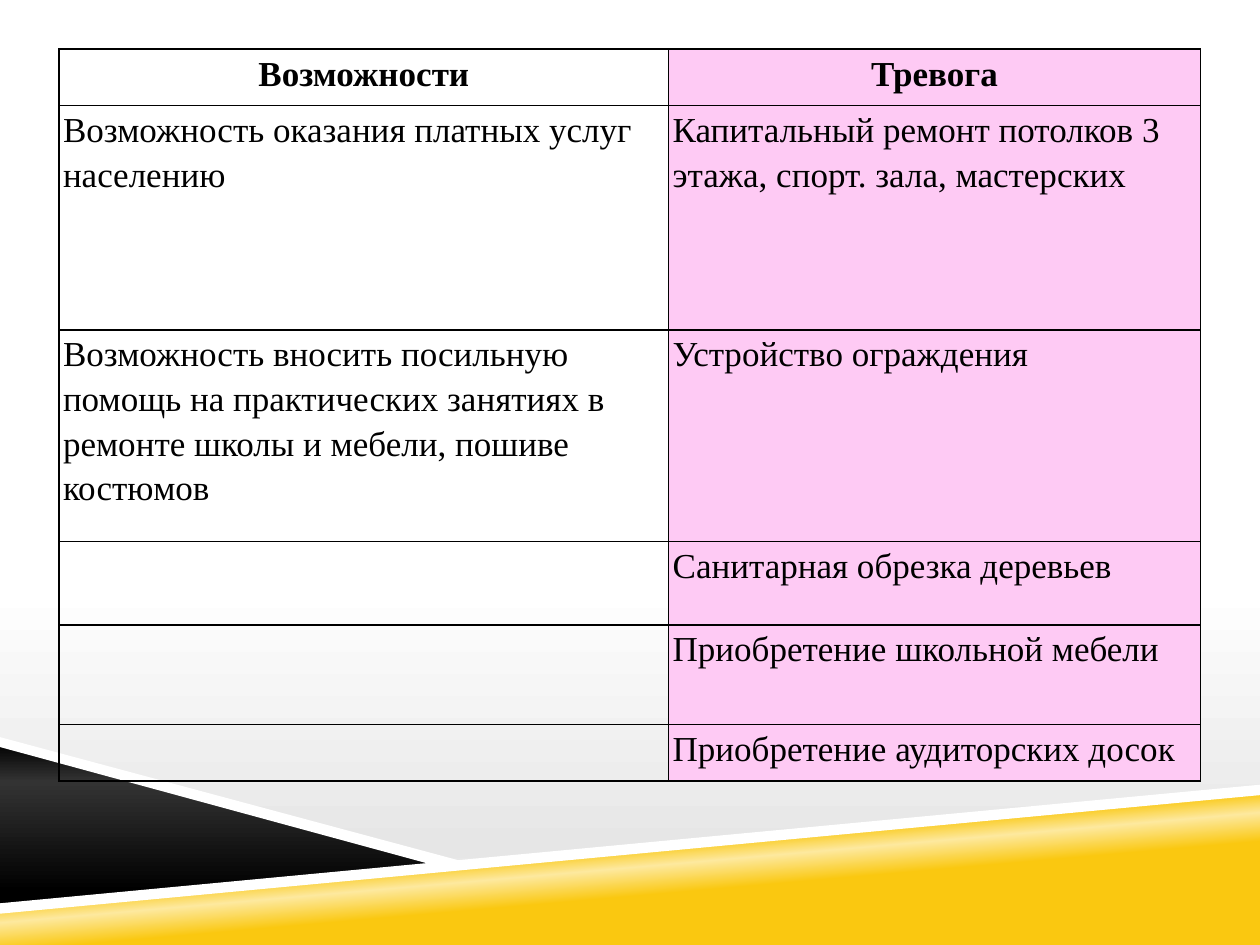
import pptx
import pptx.dml.color
import pptx.enum.text
import pptx.oxml
import pptx.oxml.ns
import pptx.util
from pptx.util import Cm

WIDTH, HEIGHT = 25.4, 19.05
BLACK, WHITE, PINK, YELLOW = "000000", "FFFFFF", "FECAF4", "FAC810"
FONT = "Times New Roman"

BACKDROP = ([(0, WHITE), (62, WHITE), (90, "E6E6E6"), (100, WHITE)], 90)
GOLD = ([(39, YELLOW), (50, "FDE99F"), (58, YELLOW)], 265)
DARK = ([(0, BLACK), (24, "333333"), (90, BLACK)], 90)

BANDS = [
    ([(0, 18.31), (WIDTH, 15.93), (WIDTH, HEIGHT), (0, HEIGHT)], GOLD),
    ([(0, 14.96), (9.12, 17.4), (0, 18.31)], DARK),
    ([(WIDTH, 15.82), (0, 18.21), (0, 18.42), (WIDTH, 16.03)], WHITE),
    ([(0, 14.86), (0, 15.06), (8.89, 17.48), (9.53, 17.42)], WHITE),
]

TABLE_LEFT, TABLE_TOP = 1.19, 0.99
COLUMNS = [12.29, 10.72]
ROWS = [
    (1.14, "Возможности", "Тревога"),
    (4.52, "Возможность оказания платных услуг населению",
     "Капитальный ремонт потолков 3 этажа, спорт. зала, мастерских"),
    (4.27, "Возможность вносить посильную помощь на практических занятиях "
     "в ремонте школы и мебели, пошиве костюмов", "Устройство ограждения"),
    (1.68, "", "Санитарная обрезка деревьев"),
    (2.01, "", "Приобретение школьной мебели"),
    (1.14, "", "Приобретение аудиторских досок"),
]


def rgb(color):
    return pptx.dml.color.RGBColor.from_string(color)


def xml(text):
    return pptx.oxml.parse_xml(text.replace(">", f" {pptx.oxml.ns.nsdecls('a')}>", 1))


def set_gradient(fill, element, stops, angle):
    fill.gradient()
    fill.gradient_angle = 360 - angle
    stop_list = element.find(".//" + pptx.oxml.ns.qn("a:gsLst"))
    for stop in list(stop_list):
        stop_list.remove(stop)
    for position, color in stops:
        stop_list.append(xml(
            f'<a:gs pos="{position * 1000}"><a:srgbClr val="{color}"/></a:gs>'))


def add_band(s, points, paint):
    points = [(Cm(x), Cm(y)) for x, y in points]
    builder = s.shapes.build_freeform(*points[0])
    builder.add_line_segments(points[1:], close=True)
    sp = builder.convert_to_shape()
    sp.shadow.inherit = False
    sp.line.fill.background()
    if isinstance(paint, str):
        sp.fill.solid()
        sp.fill.fore_color.rgb = rgb(paint)
    else:
        set_gradient(sp.fill, sp._element, *paint)


def set_borders(cell):
    tcPr = cell._tc.get_or_add_tcPr()
    for i, side in enumerate("LRTB"):
        tcPr.insert(i, xml(
            f'<a:ln{side} w="12700"><a:solidFill><a:srgbClr val="{BLACK}"/>'
            f'</a:solidFill></a:ln{side}>'))


def fill_cell(cell, text, header, color):
    if color:
        cell.fill.solid()
        cell.fill.fore_color.rgb = rgb(color)
    else:
        cell.fill.background()
    set_borders(cell)
    if not text:
        return
    cell.margin_left = cell.margin_right = Cm(0.08)
    cell.margin_top = cell.margin_bottom = 0
    p = cell.text_frame.paragraphs[0]
    p.text = text
    p.line_spacing = 1.15
    if header:
        p.alignment = pptx.enum.text.PP_ALIGN.CENTER
    p.font.name = FONT
    p.font.size = pptx.util.Pt(20)
    p.font.bold = header
    p.font.color.rgb = rgb(BLACK)


def add_table(s):
    table = s.shapes.add_table(
        len(ROWS), len(COLUMNS), Cm(TABLE_LEFT), Cm(TABLE_TOP),
        Cm(sum(COLUMNS)), Cm(sum(row[0] for row in ROWS))).table
    table.first_row = table.horz_banding = False
    for column, width in zip(table.columns, COLUMNS):
        column.width = Cm(width)
    for i, (height, *texts) in enumerate(ROWS):
        table.rows[i].height = Cm(height)
        for j, text in enumerate(texts):
            fill_cell(table.cell(i, j), text, i == 0, PINK if j else None)


def main():
    prs = pptx.Presentation()
    prs.slide_width, prs.slide_height = Cm(WIDTH), Cm(HEIGHT)
    s = prs.slides.add_slide(prs.slide_layouts[6])
    set_gradient(s.background.fill, s._element, *BACKDROP)
    for points, paint in BANDS:
        add_band(s, points, paint)
    add_table(s)
    prs.save("out.pptx")


if __name__ == "__main__":
    main()
